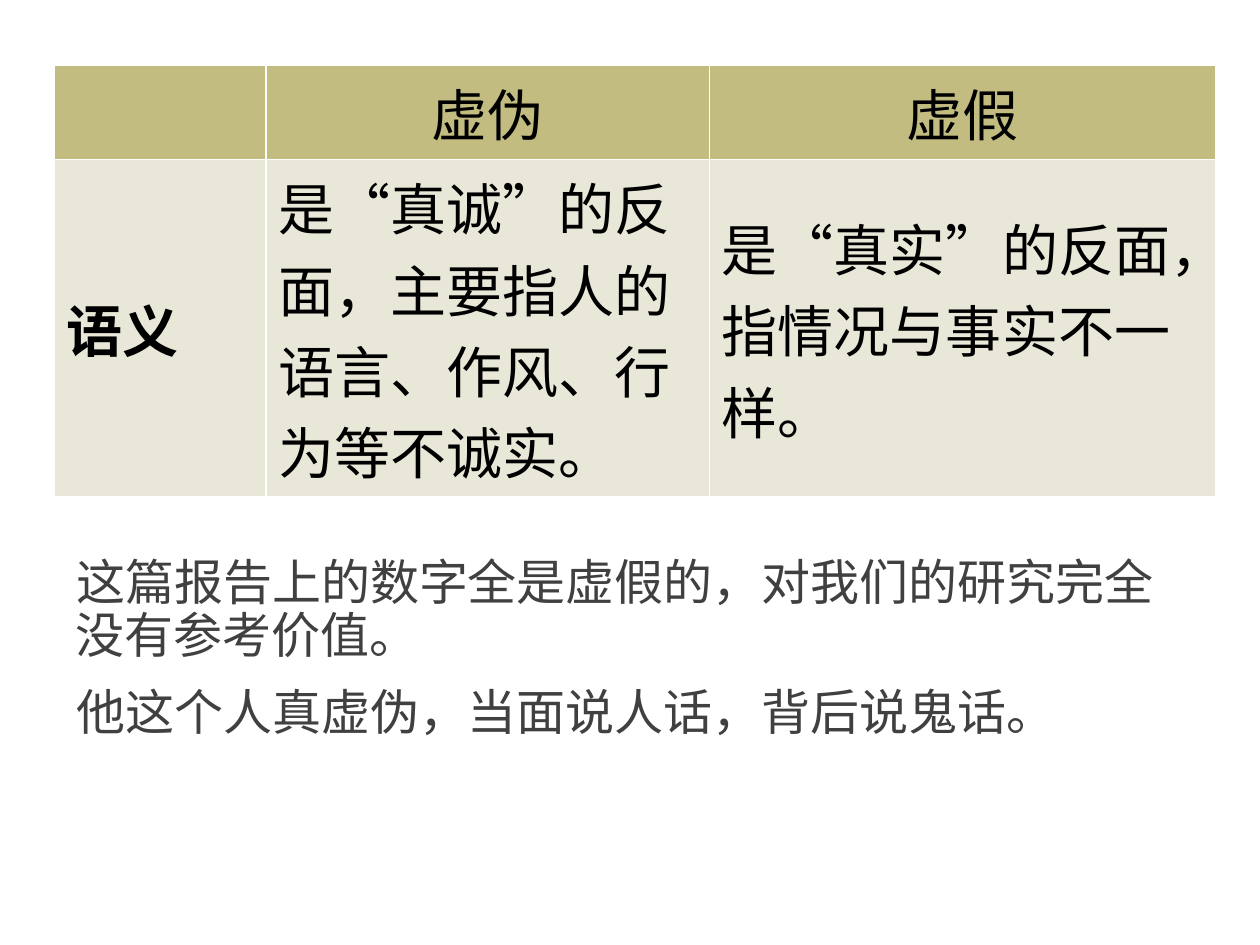
import pptx
import pptx.util
import pptx.dml.color
import pptx.enum.text
import pptx.oxml
import pptx.oxml.ns
from pptx.util import Inches

COLORS = {
    "header": "C2BC80",
    "cell": "E9E7D8",
    "border": "FFFFFF",
    "table_text": "000000",
    "body_text": "404040",
    "bullet": "E48312",
}
NAMESPACE = pptx.oxml.ns.nsdecls("a")
ALIGN = pptx.enum.text.PP_ALIGN


def write_text(paragraph, text, size, color, bold=False, align=ALIGN.LEFT):
    paragraph.alignment = align
    run = paragraph.add_run()
    run.text = text
    run.font.name = "Calibri"
    run.font.size = pptx.util.Pt(size)
    run.font.bold = bold
    run.font.color.rgb = pptx.dml.color.RGBColor.from_string(COLORS[color])


def add_borders(cell, width):
    properties = cell._tc.get_or_add_tcPr()
    for position, side in enumerate("LRTB"):
        properties.insert(position, pptx.oxml.parse_xml(
            f'<a:ln{side} {NAMESPACE} w="{pptx.util.Pt(width)}"><a:solidFill>'
            f'<a:srgbClr val="{COLORS["border"]}"/></a:solidFill></a:ln{side}>'))


presentation = pptx.Presentation()
presentation.slide_width = Inches(10)
presentation.slide_height = Inches(7.5)
slide = presentation.slides.add_slide(presentation.slide_layouts[1])
title = slide.shapes.title
title.element.getparent().remove(title.element)

# Example sentences
body = slide.placeholders[1]
body.left, body.top = Inches(0.5), Inches(4.38)
body.width, body.height = Inches(9), Inches(2.32)
frame = body.text_frame
frame.word_wrap = True
frame.auto_size = pptx.enum.text.MSO_AUTO_SIZE.NONE
frame.vertical_anchor = pptx.enum.text.MSO_ANCHOR.TOP
frame.margin_left = frame.margin_right = 0
frame.margin_top = frame.margin_bottom = Inches(0.05)

sentences = [
    "这篇报告上的数字全是虚假的，对我们的研究完全没有参考价值。",
    "他这个人真虚伪，当面说人话，背后说鬼话。",
]
for index, sentence in enumerate(sentences):
    paragraph = frame.add_paragraph() if index else frame.paragraphs[0]
    write_text(paragraph, sentence, size=28, color="body_text")
    paragraph.line_spacing = 0.9
    paragraph.space_before = pptx.util.Pt(12)
    paragraph.space_after = pptx.util.Pt(2)
    properties = paragraph._p.get_or_add_pPr()
    properties.set("marL", str(Inches(0.1)))
    properties.set("indent", str(-Inches(0.1)))
    properties.append(pptx.oxml.parse_xml(
        f'<a:buClr {NAMESPACE}><a:srgbClr val="{COLORS["bullet"]}"/></a:buClr>'))
    properties.append(pptx.oxml.parse_xml(f'<a:buChar {NAMESPACE} char=" "/>'))

# Comparison table
rows = [
    ["", "虚伪", "虚假"],
    ["语义", "是“真诚”的反面，主要指人的语言、作风、行为等不诚实。",
     "是“真实”的反面，指情况与事实不一样。"],
]
table = slide.shapes.add_table(
    2, 3, Inches(0.43), Inches(0.52), Inches(9.22), Inches(2.82)).table
for column, width in zip(table.columns, [1.68, 3.52, 4.02]):
    column.width = Inches(width)
for row, height in zip(table.rows, [0.62, 2.2]):
    row.height = Inches(height)

for row_index, texts in enumerate(rows):
    is_header = row_index == 0
    for column_index, text in enumerate(texts):
        cell = table.cell(row_index, column_index)
        cell.vertical_anchor = pptx.enum.text.MSO_ANCHOR.MIDDLE
        cell.fill.solid()
        cell.fill.fore_color.rgb = pptx.dml.color.RGBColor.from_string(
            COLORS["header" if is_header else "cell"])
        add_borders(cell, width=1)
        if text:
            write_text(cell.text_frame.paragraphs[0], text, size=32,
                       color="table_text",
                       bold=not is_header and column_index == 0,
                       align=ALIGN.CENTER if is_header else ALIGN.LEFT)

presentation.save("out.pptx")
